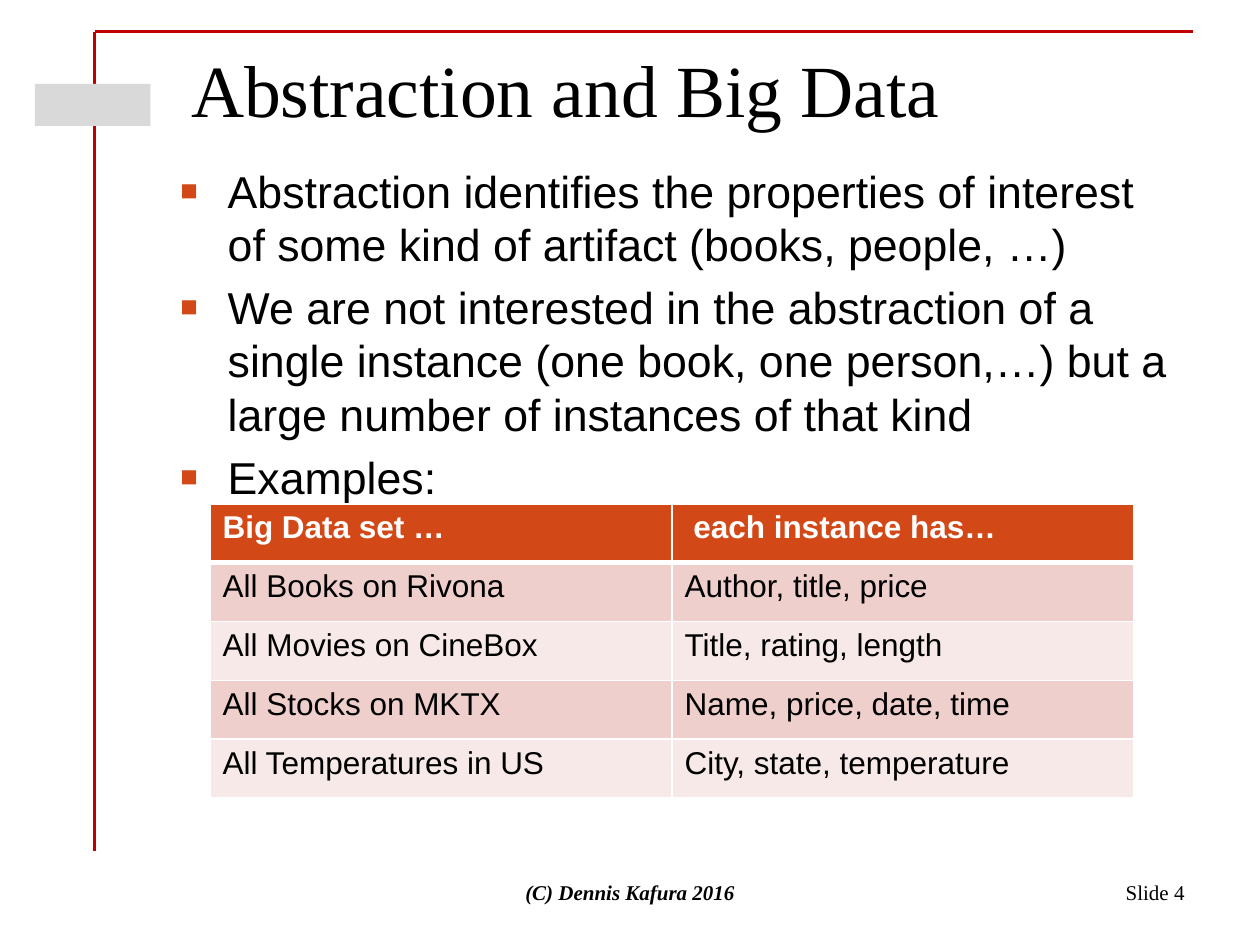
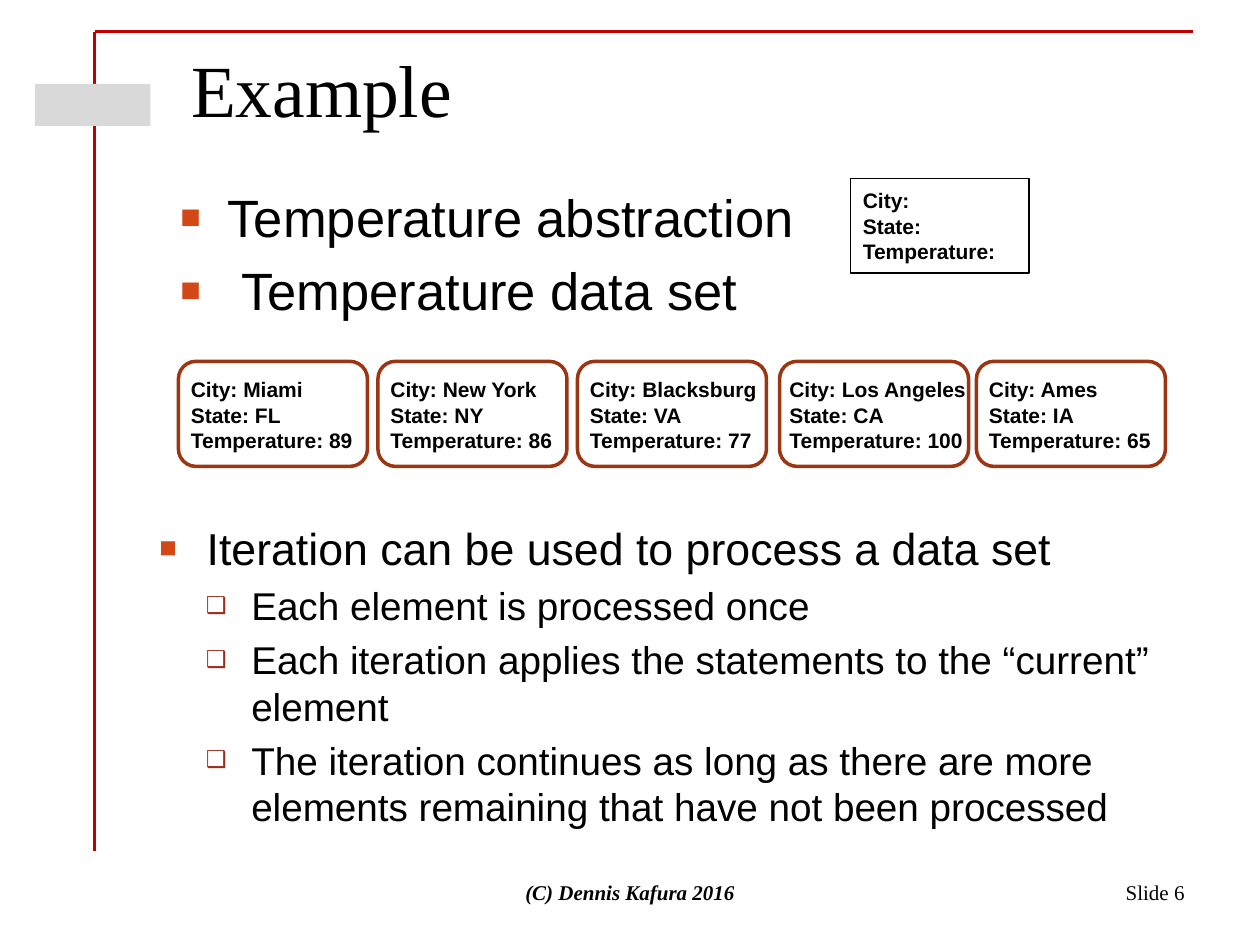
"""Build two lecture slides on abstraction and big data."""
from dataclasses import dataclass

import pptx
import pptx.dml.color
import pptx.enum.shapes
import pptx.enum.text
import pptx.oxml.ns
import pptx.util
from lxml import etree

Pt = pptx.util.Pt
RGB = pptx.dml.color.RGBColor.from_string
SHAPE = pptx.enum.shapes.MSO_SHAPE
ANCHOR = pptx.enum.text.MSO_ANCHOR
ALIGN = pptx.enum.text.PP_ALIGN
qn = pptx.oxml.ns.qn


@dataclass(frozen=True)
class Theme:
    sans: str = "Arial"
    serif: str = "Times New Roman"
    black: str = "000000"
    white: str = "FFFFFF"
    grey: str = "D9D9D9"
    red: str = "C00000"
    orange: str = "D34817"
    brick: str = "9B2D1F"
    rust: str = "9C3511"
    bands: tuple = ("F7E9E8", "EFCFCC")
    title: float = 42
    lead: float = 30
    body: float = 25.5
    sub: float = 22.1
    label: float = 18
    small: float = 12


theme = Theme()


def write(frame, lines, size, font=theme.sans, colour=theme.black, bold=False, italic=False,
          align=ALIGN.LEFT, anchor=ANCHOR.TOP):
    """Fill a frame with one paragraph per line."""
    frame.word_wrap = True
    frame.vertical_anchor = anchor
    for number, line in enumerate(lines):
        paragraph = frame.paragraphs[0] if number == 0 else frame.add_paragraph()
        paragraph.alignment = align
        run = paragraph.add_run()
        run.text = line
        run.font.name, run.font.size = font, Pt(size)
        run.font.bold, run.font.italic = bold, italic
        run.font.color.rgb = RGB(colour)


def write_bullets(slide, box, items):
    """Add a bulleted text box from (level, size, text) items."""
    frame = slide.shapes.add_textbox(*map(Pt, box)).text_frame
    frame.word_wrap = True
    marks = (("■", theme.orange, 65, 27, 27), ("❑", theme.brick, 60, 52.5, 26))
    for number, (level, size, text) in enumerate(items):
        mark, colour, percent, margin, hanging = marks[level]
        paragraph = frame.paragraphs[0] if number == 0 else frame.add_paragraph()
        paragraph.level = level
        properties = paragraph._p.get_or_add_pPr()
        properties.set("marL", str(Pt(margin)))
        properties.set("indent", str(-Pt(hanging)))
        tint = etree.SubElement(properties, qn("a:buClr"))
        etree.SubElement(tint, qn("a:srgbClr"), val=colour)
        etree.SubElement(properties, qn("a:buSzPct"), val=str(percent * 1000))
        etree.SubElement(properties, qn("a:buFont"), typeface=theme.sans)
        etree.SubElement(properties, qn("a:buChar"), char=mark)
        if number:
            paragraph.space_before = Pt(round(size * 0.2, 1))
        run = paragraph.add_run()
        run.text = text
        run.font.name, run.font.size = theme.sans, Pt(size)
        run.font.color.rgb = RGB(theme.black)


deck = pptx.Presentation()
deck.slide_width, deck.slide_height = Pt(720), Pt(540)

rules = ((54, 18, 682, 18, 2), (54, 18, 54, 48, 1.75), (54, 72, 54, 486, 1.75))

slides = []
for heading, number in (("Abstraction and Big Data", 4), ("Example", 6)):
    slide = deck.slides.add_slide(deck.slide_layouts[5])
    slides.append(slide)
    for *ends, weight in rules:
        rule = slide.shapes.add_connector(pptx.enum.shapes.MSO_CONNECTOR.STRAIGHT, *map(Pt, ends))
        rule.line.color.rgb = RGB(theme.red)
        rule.line.width = Pt(weight)
        etree.SubElement(rule._element.spPr, qn("a:effectLst"))
    badge = slide.shapes.add_shape(SHAPE.RECTANGLE, Pt(20), Pt(48), Pt(66), Pt(24))
    badge.shadow.inherit = False
    badge.fill.solid()
    badge.fill.fore_color.rgb = RGB(theme.grey)
    badge.line.fill.background()

    title = slide.shapes.title
    title.left, title.top, title.width, title.height = map(Pt, (102, 22.6, 582, 56))
    write(title.text_frame, [heading], theme.title, theme.serif, anchor=ANCHOR.MIDDLE)

    page = slide.shapes.add_textbox(Pt(516), Pt(492), Pt(168), Pt(36))
    write(page.text_frame, [f"Slide {number}"], theme.small, theme.serif,
          align=ALIGN.RIGHT, anchor=ANCHOR.MIDDLE)
    credit = slide.shapes.add_textbox(Pt(246), Pt(492), Pt(228), Pt(36))
    write(credit.text_frame, ["(C) Dennis Kafura 2016"], theme.small, theme.serif,
          bold=True, italic=True, align=ALIGN.CENTER, anchor=ANCHOR.MIDDLE)

big_data, example = slides

write_bullets(big_data, (96, 90, 588, 186), [(0, theme.body, text) for text in (
    "Abstraction identifies the properties of interest of some kind of artifact (books, people, …)",
    "We are not interested in the abstraction of a single instance (one book, one person,…) "
    "but a large number of instances of that kind",
    "Examples:",
)])

data_sets = (
    ("Big Data set …", " each instance has…"),
    ("All Books on Rivona", "Author, title, price"),
    ("All Movies on CineBox", "Title, rating, length"),
    ("All Stocks on MKTX", "Name, price, date, time"),
    ("All Temperatures in US", "City, state, temperature"),
)
grid = big_data.shapes.add_table(len(data_sets), 2, Pt(120), Pt(288), Pt(528), Pt(168)).table
for row, entries in enumerate(data_sets):
    for column, entry in enumerate(entries):
        cell = grid.cell(row, column)
        if row == 0:
            edge = etree.SubElement(cell._tc.get_or_add_tcPr(), qn("a:lnB"), w=str(Pt(3)))
            paint = etree.SubElement(edge, qn("a:solidFill"))
            etree.SubElement(paint, qn("a:srgbClr"), val=theme.white)
        cell.fill.solid()
        cell.fill.fore_color.rgb = RGB(theme.bands[row % 2] if row else theme.orange)
        write(cell.text_frame, [entry], theme.label, bold=row == 0,
              colour=theme.black if row else theme.white)

write_bullets(example, (96, 102, 588, 108), [
    (0, theme.lead, "Temperature abstraction"),
    (0, theme.lead, " Temperature data set"),
])

abstraction = example.shapes.add_shape(SHAPE.RECTANGLE, Pt(486), Pt(102), Pt(102), Pt(54))
abstraction.shadow.inherit = False
abstraction.fill.background()
abstraction.line.color.rgb = RGB(theme.black)
abstraction.line.width = Pt(0.75)
fields = ("City:", "State:", "Temperature:")
write(abstraction.text_frame, fields, theme.small, bold=True, anchor=ANCHOR.MIDDLE)

readings = (("Miami", "FL", 89, 0), ("New York", "NY", 86, 0), ("Blacksburg", "VA", 77, 0),
            ("Los Angeles", "CA", 100, 1.5), ("Ames", "IA", 65, 0))
for position, (*reading, nudge) in enumerate(readings):
    left = 102 + 114 * position
    instance = example.shapes.add_group_shape()
    card = instance.shapes.add_shape(SHAPE.ROUNDED_RECTANGLE, Pt(left + nudge), Pt(206.5),
                                     Pt(108), Pt(60))
    card.shadow.inherit = False
    card.fill.solid()
    card.fill.fore_color.rgb = RGB(theme.white)
    card.line.color.rgb = RGB(theme.rust)
    card.line.width = Pt(2)
    values = instance.shapes.add_textbox(Pt(left), Pt(204), Pt(120), Pt(66))
    write(values.text_frame, [f"{field} {value}" for field, value in zip(fields, reading)],
          theme.small, bold=True, anchor=ANCHOR.MIDDLE)

write_bullets(example, (84, 294, 588, 180), [
    (0, theme.body, "Iteration can be used to process a data set"),
    (1, theme.sub, "Each element is processed once"),
    (1, theme.sub, "Each iteration applies the statements to the “current” element"),
    (1, theme.sub, "The iteration continues as long as there are more elements remaining "
                   "that have not been processed"),
])

deck.save("out.pptx")
